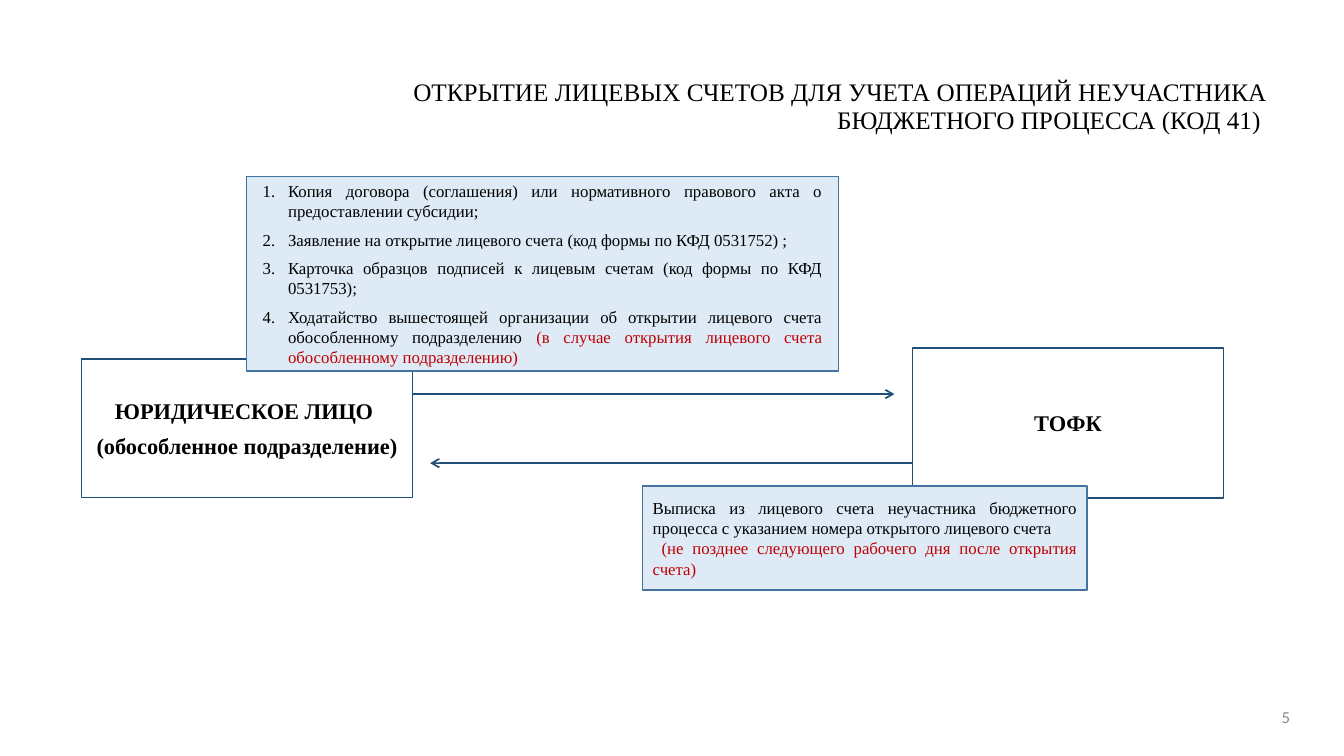
import pptx
import pptx.dml.color
import pptx.enum.shapes
import pptx.enum.text
import pptx.oxml
import pptx.oxml.ns
import pptx.util

Cm = pptx.util.Cm
Pt = pptx.util.Pt
Shape = pptx.enum.shapes.MSO_SHAPE
Align = pptx.enum.text.PP_ALIGN
Anchor = pptx.enum.text.MSO_ANCHOR
NAVY, STEEL, PALE, RED, BLACK, GREY = (
    "1F4E79", "43739E", "DEEBF7", "C00000", "000000", "8C8C8C")
SERIF = "Times New Roman"

TITLE = ("ОТКРЫТИЕ ЛИЦЕВЫХ СЧЕТОВ ДЛЯ УЧЕТА ОПЕРАЦИЙ НЕУЧАСТНИКА "
         "БЮДЖЕТНОГО ПРОЦЕССА (КОД 41) ")
APPLICANT = ["ЮРИДИЧЕСКОЕ ЛИЦО ", "(обособленное подразделение)"]
DOCUMENTS = [
    ("Копия договора (соглашения) или нормативного правового акта о "
     "предоставлении субсидии;", ""),
    ("Заявление на открытие лицевого счета (код формы по КФД 0531752) ;", ""),
    ("Карточка образцов подписей к лицевым счетам (код формы по КФД "
     "0531753);", ""),
    ("Ходатайство вышестоящей организации об открытии лицевого счета "
     "обособленному подразделению ",
     "(в случае открытия лицевого счета обособленному подразделению)"),
]
STATEMENT = [
    ("Выписка из лицевого счета неучастника бюджетного процесса с указанием "
     "номера открытого лицевого счета", ""),
    (" ", "(не позднее следующего рабочего дня после открытия счета)"),
]


def rgb(hex_color):
    return pptx.dml.color.RGBColor.from_string(hex_color)


def format_run(run, size, color=BLACK, font=SERIF, bold=False):
    run.font.size = Pt(size)
    run.font.name = font
    run.font.bold = bold
    run.font.color.rgb = rgb(color)


def add_frame(slide, box, preset, outline, fill=None):
    frame = slide.shapes.add_shape(preset, *map(Cm, box))
    frame.shadow.inherit = False
    if fill:
        frame.fill.solid()
        frame.fill.fore_color.rgb = rgb(fill)
    else:
        frame.fill.background()
    frame.line.color.rgb = rgb(outline)
    frame.line.width = Pt(1)
    frame.text_frame.word_wrap = True
    frame.text_frame.vertical_anchor = Anchor.MIDDLE
    return frame


def add_label(slide, box, text, size, color=BLACK, font=SERIF,
              anchor=Anchor.TOP, spacing=None):
    label = slide.shapes.add_textbox(*map(Cm, box)).text_frame
    label.word_wrap = True
    label.vertical_anchor = anchor
    label.text = text
    paragraph = label.paragraphs[0]
    paragraph.alignment = Align.RIGHT
    if spacing:
        paragraph.line_spacing = Pt(spacing)
    format_run(paragraph.runs[0], size, color, font)


def add_party(slide, box, lines):
    party = add_frame(slide, box, Shape.ROUNDED_RECTANGLE, NAVY)
    party.adjustments[0] = 0
    party.text_frame.text = "\n".join(lines)
    for index, paragraph in enumerate(party.text_frame.paragraphs):
        paragraph.alignment = Align.CENTER
        if index:
            paragraph.space_before = Pt(6)
        format_run(paragraph.runs[0], 16, bold=True)


def number_paragraph(paragraph):
    properties = paragraph._p.get_or_add_pPr()
    properties.set("marL", str(Cm(0.64)))
    properties.set("indent", str(-Cm(0.64)))
    numbering = pptx.oxml.parse_xml(
        f'<a:buAutoNum {pptx.oxml.ns.nsdecls("a")} type="arabicPeriod"/>')
    properties.append(numbering)


def add_note(slide, box, items, numbered=False):
    note = add_frame(slide, box, Shape.RECTANGLE, STEEL, PALE).text_frame
    if numbered:
        note.margin_left = note.margin_right = Cm(0.4)
    note.text = "\n".join(main for main, condition in items)
    for index, (paragraph, (main, condition)) in enumerate(
            zip(note.paragraphs, items)):
        paragraph.alignment = Align.JUSTIFY
        if numbered:
            number_paragraph(paragraph)
            if index:
                paragraph.space_before = Pt(6)
        format_run(paragraph.runs[0], 12)
        if condition:
            remark = paragraph.add_run()
            remark.text = condition
            format_run(remark, 12, RED)


def add_arrow(slide, start_x, end_x, y):
    arrow = slide.shapes.add_connector(
        pptx.enum.shapes.MSO_CONNECTOR.STRAIGHT,
        Cm(start_x), Cm(y), Cm(end_x), Cm(y))
    arrow.line.color.rgb = rgb(NAVY)
    arrow.line.width = Pt(1.25)
    namespace = pptx.oxml.ns.nsdecls("a")
    arrow.line._get_or_add_ln().append(
        pptx.oxml.parse_xml(f'<a:tailEnd {namespace} type="arrow"/>'))
    arrow._element.spPr.append(
        pptx.oxml.parse_xml(f'<a:effectLst {namespace}/>'))


def add_exchange(slide, box):
    left, top, width, height = box
    right = left + width
    applicant_width, treasury_width = 8.33, 7.85
    applicant_right = left + applicant_width
    treasury_left = right - treasury_width
    gap = 0.45
    add_party(slide, (left, top + 0.28, applicant_width, height - 0.3),
              APPLICANT)
    add_party(slide, (treasury_left, top, treasury_width, height), ["ТОФК"])
    add_arrow(slide, applicant_right, treasury_left - gap, top + 1.16)
    add_arrow(slide, treasury_left, applicant_right + gap, top + 2.9)
    add_note(slide, (left + 14.14, top + 3.48, 11.2, 2.62), STATEMENT)
    add_note(slide, (left + 4.16, top - 4.32, 14.91, 4.9), DOCUMENTS, True)


def main():
    presentation = pptx.Presentation()
    presentation.slide_width = Cm(33.87)
    presentation.slide_height = Cm(19.05)
    slide = presentation.slides.add_slide(presentation.slide_layouts[6])
    add_label(slide, (31.57, 17.55, 1.19, 1.02), "5", 12, GREY, "Calibri",
              Anchor.MIDDLE)
    add_label(slide, (9.58, 1.85, 22.6, 1.68), TITLE, 18, spacing=20)
    add_exchange(slide, (2.06, 8.77, 28.78, 3.78))
    presentation.save("out.pptx")


if __name__ == "__main__":
    main()
